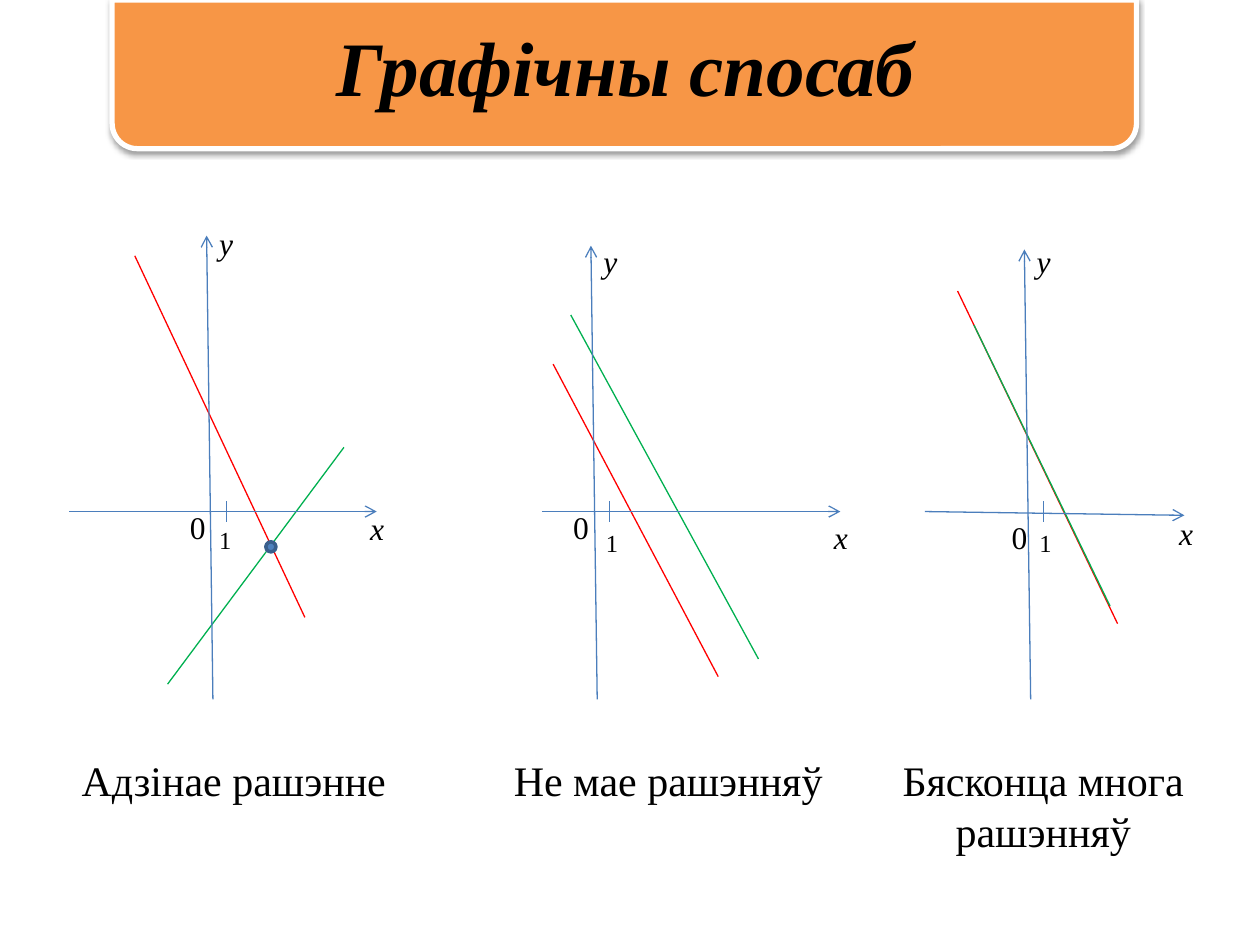
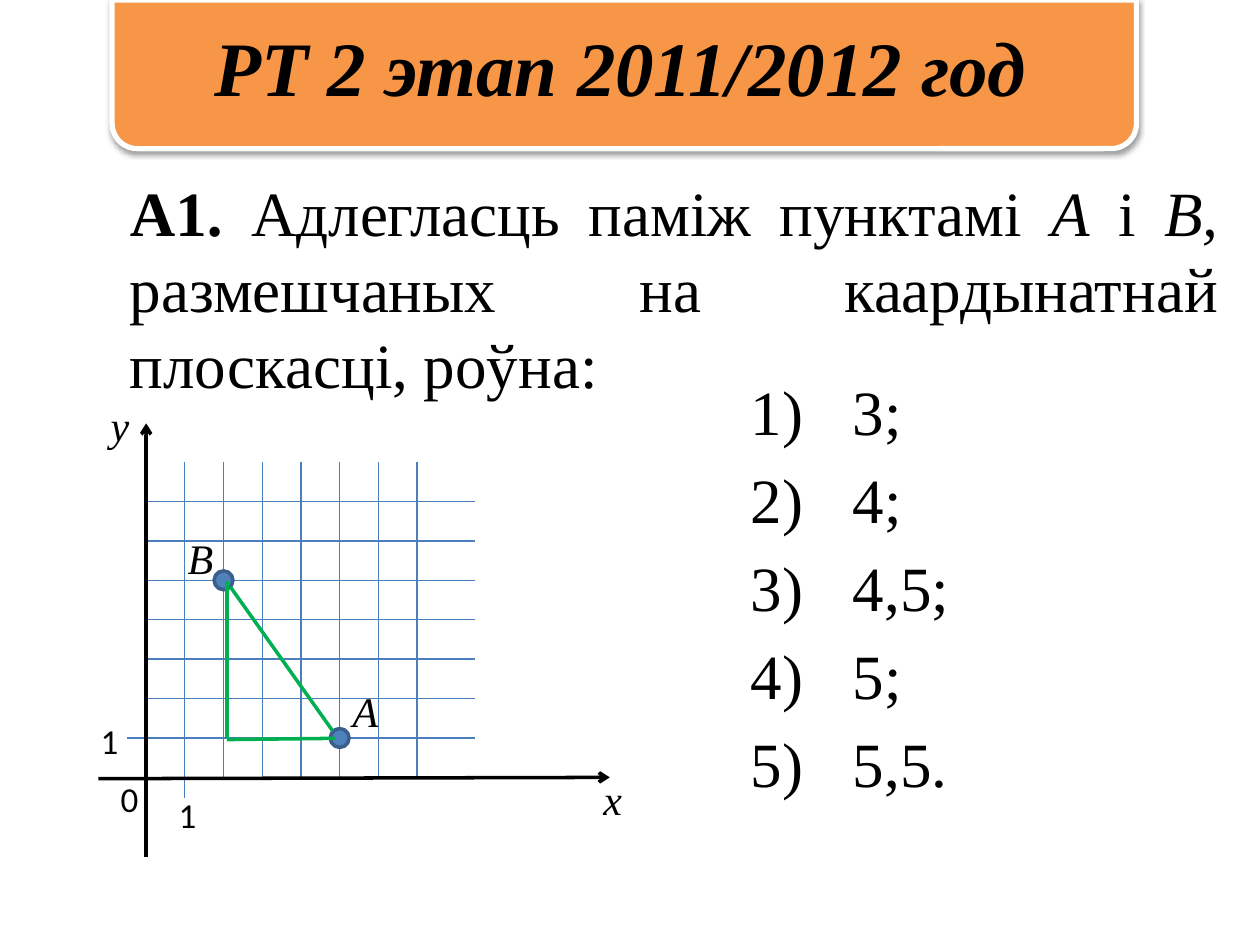
"""Build two slides on the graphical method and the distance between points."""
from lxml.etree import SubElement
from pptx import Presentation
from pptx.dml.color import RGBColor
from pptx.enum.shapes import MSO_CONNECTOR, MSO_SHAPE
from pptx.enum.text import MSO_AUTO_SIZE, PP_ALIGN
from pptx.oxml.ns import qn
from pptx.util import Inches, Pt

COLOURS = {
    "band": "F79646", "edge": "FFFFFF", "ink": "000000", "axis": "4B7EBC",
    "first": "FF0000", "second": "00B050", "dot": "4F81BD", "rim": "3A5F8C",
}
SERIF, SANS = "Times New Roman", "Calibri"
TITLE_ONLY, TWO_CONTENT = 5, 3

SYSTEMS = [
    {
        "first": ((1.07, 2.03), (2.42, 4.9)), "second": ((1.33, 5.43), (2.73, 3.55)),
        "x_axis": ((0.55, 4.06), (2.99, 4.06)), "y_axis": ((1.69, 5.55), (1.64, 1.87)),
        "x": (2.84, 3.99), "y": (1.64, 1.73), "zero": (1.41, 3.98),
        "one": (1.64, 4.12), "tick": 1.8,
        "caption": ("Адзінае рашэнне", 0.55, 2.73, PP_ALIGN.LEFT),
    },
    {
        "first": ((4.39, 2.89), (5.7, 5.37)), "second": ((6.02, 5.23), (4.53, 2.5)),
        "x_axis": ((4.3, 4.06), (6.67, 4.06)), "y_axis": ((4.74, 5.55), (4.69, 1.95)),
        "x": (6.52, 4.06), "y": (4.69, 1.87), "zero": (4.45, 3.98),
        "one": (4.71, 4.14), "tick": 4.84,
        "caption": ("Не мае рашэнняў", 3.98, 2.66, PP_ALIGN.LEFT),
    },
    {
        "first": ((7.6, 2.31), (8.87, 4.95)), "second": ((8.81, 4.81), (7.73, 2.58)),
        "x_axis": ((7.34, 4.06), (9.4, 4.09)), "y_axis": ((8.18, 5.55), (8.13, 1.98)),
        "x": (9.26, 4.03), "y": (8.13, 1.87), "zero": (7.93, 4.06),
        "one": (8.15, 4.14), "tick": 8.28,
        "caption": ("Бясконца многа рашэнняў", 7.03, 2.5, PP_ALIGN.CENTER),
    },
]

ORIGIN_X, ORIGIN_Y = 1.16, 6.17
UNITS = 7
UNIT_X, UNIT_Y = 2.15 / UNITS, 2.19 / UNITS
GRID_RIGHT, GRID_TOP = 3.77, 3.67


def rgb(name):
    return RGBColor.from_string(COLOURS[name])


def style_font(font, size, face=SERIF, bold=False, italic=False):
    font.name, font.size = face, Pt(size)
    font.bold, font.italic = bold, italic
    font.color.rgb = rgb("ink")


def add_run(paragraph, text, size, **style):
    run = paragraph.add_run()
    run.text = text
    style_font(run.font, size, **style)


def place(placeholder, left, top, width, height):
    placeholder.left, placeholder.top = Inches(left), Inches(top)
    placeholder.width, placeholder.height = Inches(width), Inches(height)
    placeholder.text_frame.auto_size = MSO_AUTO_SIZE.NONE


def add_line(slide, start, end, colour="axis", width=0.75, arrow=False):
    line = slide.shapes.add_connector(
        MSO_CONNECTOR.STRAIGHT, *(Inches(value) for value in (*start, *end)))
    line.line.color.rgb = rgb(colour)
    line.line.width = Pt(width)
    if arrow:
        SubElement(line.line._get_or_add_ln(), qn("a:tailEnd"), type="arrow")
    SubElement(line._element.spPr, qn("a:effectLst"))


def add_label(slide, text, at, size, width=0.4, height=0.4, align=PP_ALIGN.LEFT, **style):
    label = slide.shapes.add_textbox(*(Inches(value) for value in (*at, width, height)))
    label.text_frame.word_wrap = True
    paragraph = label.text_frame.paragraphs[0]
    paragraph.alignment = align
    add_run(paragraph, text, size, **style)


def add_dot(slide, centre, size):
    x, y = centre
    dot = slide.shapes.add_shape(
        MSO_SHAPE.OVAL, Inches(x - size / 2), Inches(y - size / 2), Inches(size), Inches(size))
    dot.shadow.inherit = False
    dot.fill.solid()
    dot.fill.fore_color.rgb = rgb("dot")
    dot.line.color.rgb = rgb("rim")
    dot.line.width = Pt(2)


def add_band(slide):
    band = slide.shapes.add_shape(
        MSO_SHAPE.ROUND_2_SAME_RECTANGLE, Inches(0.89), 0, Inches(8.13), Inches(1.18))
    band.adjustments[0], band.adjustments[1] = 0, 0.17
    band.fill.solid()
    band.fill.fore_color.rgb = rgb("band")
    band.line.color.rgb = rgb("edge")
    band.line.width = Pt(3)
    band.shadow.inherit = False
    effects = band._element.spPr.find(qn("a:effectLst"))
    shadow = SubElement(effects, qn("a:outerShdw"), blurRad=str(Pt(3.1)),
                        dist=str(Pt(1.6)), dir="5400000", rotWithShape="0")
    tint = SubElement(shadow, qn("a:srgbClr"), val=COLOURS["ink"])
    SubElement(tint, qn("a:alpha"), val="38000")
    slide.shapes.title._element.addprevious(band._element)


def add_titled_slide(deck, layout, title, left, width):
    slide = deck.slides.add_slide(deck.slide_layouts[layout])
    place(slide.shapes.title, left, 0.1, width, 0.84)
    paragraph = slide.shapes.title.text_frame.paragraphs[0]
    paragraph.alignment = PP_ALIGN.CENTER
    add_run(paragraph, title, 44, bold=True, italic=True)
    add_band(slide)
    return slide


def set_bullet(paragraph, margin, indent, numbering=None):
    properties = paragraph._p.get_or_add_pPr()
    properties.set("marL", str(Inches(margin)))
    properties.set("indent", str(Inches(indent)))
    if numbering:
        SubElement(properties, qn("a:buFont"), typeface="+mj-lt")
        SubElement(properties, qn("a:buAutoNum"), type=numbering)
    else:
        SubElement(properties, qn("a:buNone"))


def add_system(slide, system):
    for name in ("first", "second"):
        add_line(slide, *system[name], colour=name)
    for name in ("x_axis", "y_axis"):
        add_line(slide, *system[name], arrow=True)
    tick = system["tick"]
    add_line(slide, (tick, 3.98), (tick, 4.14))
    add_label(slide, "х", system["x"], 18, italic=True)
    add_label(slide, "у", system["y"], 18, italic=True)
    add_label(slide, "0", system["zero"], 18)
    add_label(slide, "1", system["one"], 14)
    text, left, width, align = system["caption"]
    add_label(slide, text, (left, 5.94), 24, width, 0.5, align)


def grid_point(x, y):
    return ORIGIN_X + x * UNIT_X, ORIGIN_Y - y * UNIT_Y


def add_coordinate_plane(slide):
    for step in range(1, UNITS + 1):
        x, y = grid_point(step, step)
        is_unit = step == 1
        add_line(slide, (x, 6.33 if is_unit else ORIGIN_Y), (x, GRID_TOP))
        add_line(slide, (1.01 if is_unit else ORIGIN_X, y), (GRID_RIGHT, y))
    add_line(slide, (ORIGIN_X, 6.8), (ORIGIN_X, 3.36), "ink", 2, arrow=True)
    add_line(slide, (0.78, 6.18), (4.84, ORIGIN_Y), "ink", 2, arrow=True)
    for text, at in (("0", (0.86, 6.12)), ("1", (1.32, 6.25)), ("1", (0.7, 5.66))):
        add_label(slide, text, at, 20, face=SANS)
    for text, at in (("х", (4.69, 6.09)), ("у", (0.78, 3.12)),
                     ("А", (2.7, 5.39)), ("В", (1.39, 4.18))):
        add_label(slide, text, at, 24, height=0.5, italic=True)
    for point in ((5, 1), (2, 5)):
        add_dot(slide, grid_point(*point), 0.15)


def add_triangle(slide):
    for start, end in (((1.8, 4.61), (1.8, 5.86)), ((1.8, 5.87), (2.66, 5.86)),
                       ((1.83, 4.66), (2.64, 5.8))):
        add_line(slide, start, end, "second", 2)


def fill_question(question):
    place(question, 0.55, 1.33, 9.22, 2.27)
    paragraph = question.text_frame.paragraphs[0]
    paragraph.alignment = PP_ALIGN.JUSTIFY
    paragraph.space_before = Pt(0)
    set_bullet(paragraph, 0.38, 0)
    add_run(paragraph, "А1. ", 36, bold=True)
    for text, italic in (("Адлегласць паміж пунктамі ", False), ("А", True), (" і ", False),
                         ("В, ", True),
                         ("размешчаных на каардынатнай плоскасці, роўна:", False)):
        add_run(paragraph, text, 36, italic=italic)


def fill_answers(answers):
    place(answers, 5.86, 2.91, 4.1, 4.36)
    frame = answers.text_frame
    for index, text in enumerate(("3;", "4;", "4,5;", "5;", "5,5.")):
        paragraph = frame.add_paragraph() if index else frame.paragraphs[0]
        paragraph.space_before = Pt(7 if index else 0)
        set_bullet(paragraph, 0.81, -0.81, "arabicParenR")
        add_run(paragraph, text, 36)
        style_font(paragraph.font, 36)
    for font in frame._txBody.iter(qn("a:buFont")):
        font.set("typeface", SERIF)


def main():
    deck = Presentation()
    deck.slide_width, deck.slide_height = Inches(10), Inches(7.5)

    method = add_titled_slide(deck, TITLE_ONLY, "Графічны спосаб", 1.41, 7.11)
    for system in SYSTEMS:
        add_system(method, system)
    add_dot(method, (2.15, 4.34), 0.08)

    task = add_titled_slide(deck, TWO_CONTENT, "РТ 2 этап 2011/2012 год", 0.94, 7.97)
    add_coordinate_plane(task)
    fill_answers(task.placeholders[2])
    fill_question(task.placeholders[1])
    add_triangle(task)

    deck.save("out.pptx")


if __name__ == "__main__":
    main()
